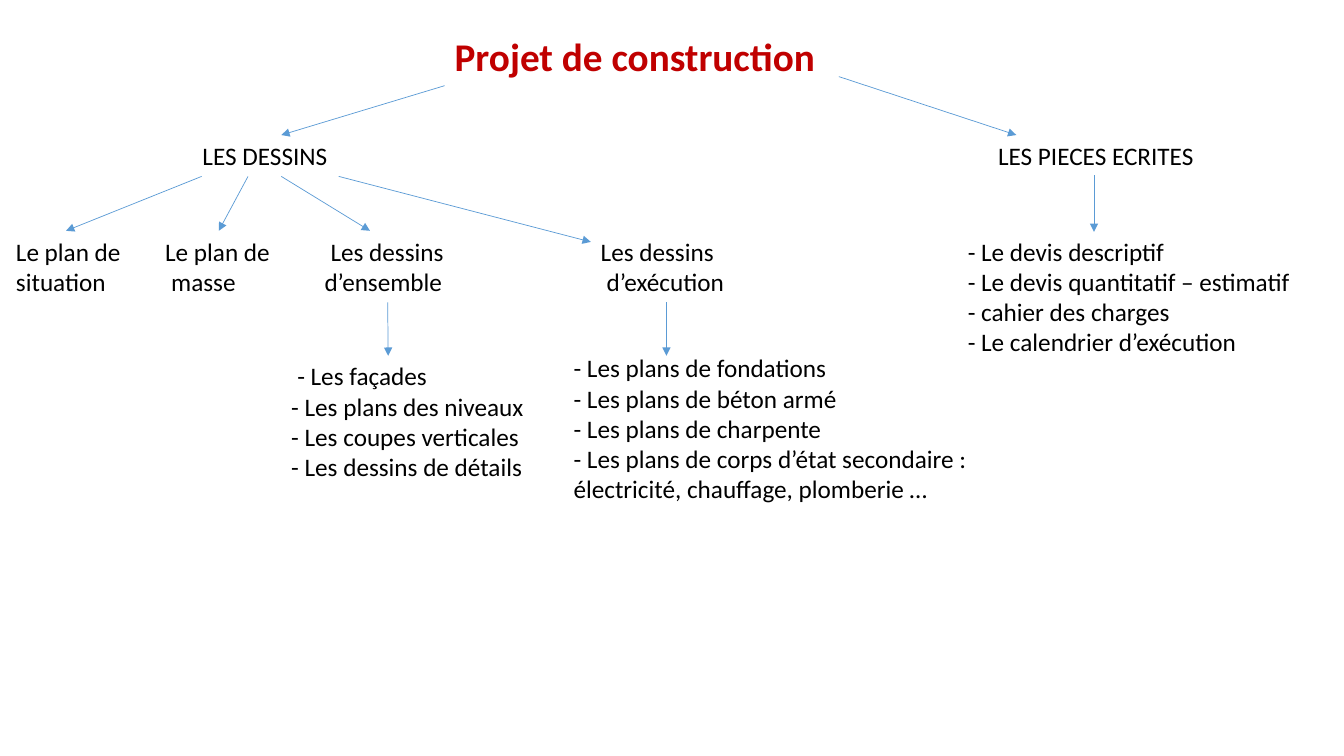
from lxml import etree
from pptx import Presentation, util as u
from pptx.dml.color import RGBColor
from pptx.enum import shapes, text
from pptx.oxml.ns import qn

PX_PER_INCH = 100
SPACE = 6
FONT = "Calibri"
BLACK, RED, BLUE = "000000", "C00000", "5B9BD5"
TOP, BOTTOM = 0, 2


def px(length):
    return u.Emu(length * u.Inches(1) // PX_PER_INCH)


def color(value):
    return RGBColor.from_string(value)


def add_span(para, words, size, tint, bold=False):
    span = para.add_run()
    span.text = words
    span.font.name = FONT
    span.font.size = u.Pt(size)
    span.font.bold = bold
    span.font.color.rgb = color(tint)


def add_title(page, left, top, width, height, words):
    title = page.shapes.title
    title.left, title.top, title.width, title.height = map(px, (left, top, width, height))
    frame = title.text_frame
    frame.word_wrap = True
    frame.auto_size = text.MSO_AUTO_SIZE.NONE
    frame.vertical_anchor = text.MSO_ANCHOR.TOP
    para = frame.paragraphs[0]
    para.alignment = text.PP_ALIGN.LEFT
    add_span(para, words, 28, RED, True)


def add_text(page, left, top, width, height, lines, wrap=False, indented=()):
    box = page.shapes.add_textbox(*map(px, (left, top, width, height)))
    frame = box.text_frame
    frame.word_wrap = wrap
    frame.auto_size = text.MSO_AUTO_SIZE.SHAPE_TO_FIT_TEXT
    for index, words in enumerate(lines):
        para = frame.add_paragraph() if index else frame.paragraphs[0]
        if index in indented:
            properties = para._p.get_or_add_pPr()
            properties.set("marL", str(px(SPACE)))
            properties.set("indent", "0")
        add_span(para, words, 18, BLACK)
    return box


def add_arrow(page, start, end, source=None, target=None):
    arrow = page.shapes.add_connector(
        shapes.MSO_CONNECTOR.STRAIGHT, *map(px, (*start, *end)))
    if source is not None:
        arrow.begin_connect(source, BOTTOM)
    if target is not None:
        arrow.end_connect(target, TOP)
    arrow.line.color.rgb = color(BLUE)
    arrow.line.width = u.Pt(0.5)
    etree.SubElement(arrow.line._get_or_add_ln(), qn("a:tailEnd"), type="triangle")
    etree.SubElement(arrow._element.spPr, qn("a:effectLst"))


def main():
    deck = Presentation()
    deck.slide_width, deck.slide_height = px(1333), px(750)
    page = deck.slides.add_slide(deck.slide_layouts[5])

    add_title(page, 441, 27, 451, 57, "Projet de construction")
    add_text(page, 185, 134, 151, 40, ["LES DESSINS"], indented=[0])
    written = add_text(page, 974, 134, 222, 40, ["LES PIECES ECRITES"], indented=[0])

    situation = add_text(page, 0, 229, 131, 71, ["Le plan de", "situation"], indented=[0, 1])
    site = add_text(page, 154, 229, 126, 71, ["Le plan de", "masse"], indented=[1])
    overall = add_text(page, 312, 229, 145, 71, ["Les dessins", "d’ensemble"], indented=[0])
    execution = add_text(page, 586, 229, 150, 71, ["Les dessins", "d’exécution"], indented=[1])

    add_text(page, 279, 353, 271, 131, [
        "- Les façades",
        "- Les plans des niveaux",
        "- Les coupes verticales",
        "- Les dessins de détails",
    ], wrap=True, indented=[0])
    add_text(page, 559, 345, 415, 162, [
        "- Les plans de fondations",
        "- Les plans de béton armé",
        "- Les plans de charpente",
        "- Les plans de corps d’état secondaire :",
        "électricité, chauffage, plomberie …",
    ], wrap=True)
    add_text(page, 950, 229, 365, 131, [
        "- Le devis descriptif",
        "- Le devis quantitatif – estimatif",
        "- cahier des charges",
        "- Le calendrier d’exécution",
    ], wrap=True)

    add_arrow(page, (441, 85), (279, 134))
    add_arrow(page, (832, 76), (1008, 134))
    add_arrow(page, (200, 175), (66, 229), target=situation)
    add_arrow(page, (246, 175), (216, 229), target=site)
    add_arrow(page, (279, 175), (367, 229))
    add_arrow(page, (336, 175), (586, 240))
    add_arrow(page, (1085, 175), (1085, 230), source=written)
    add_arrow(page, (385, 299), (385, 353), source=overall)
    add_arrow(page, (661, 299), (661, 353), source=execution)

    deck.save("out.pptx")


if __name__ == "__main__":
    main()
